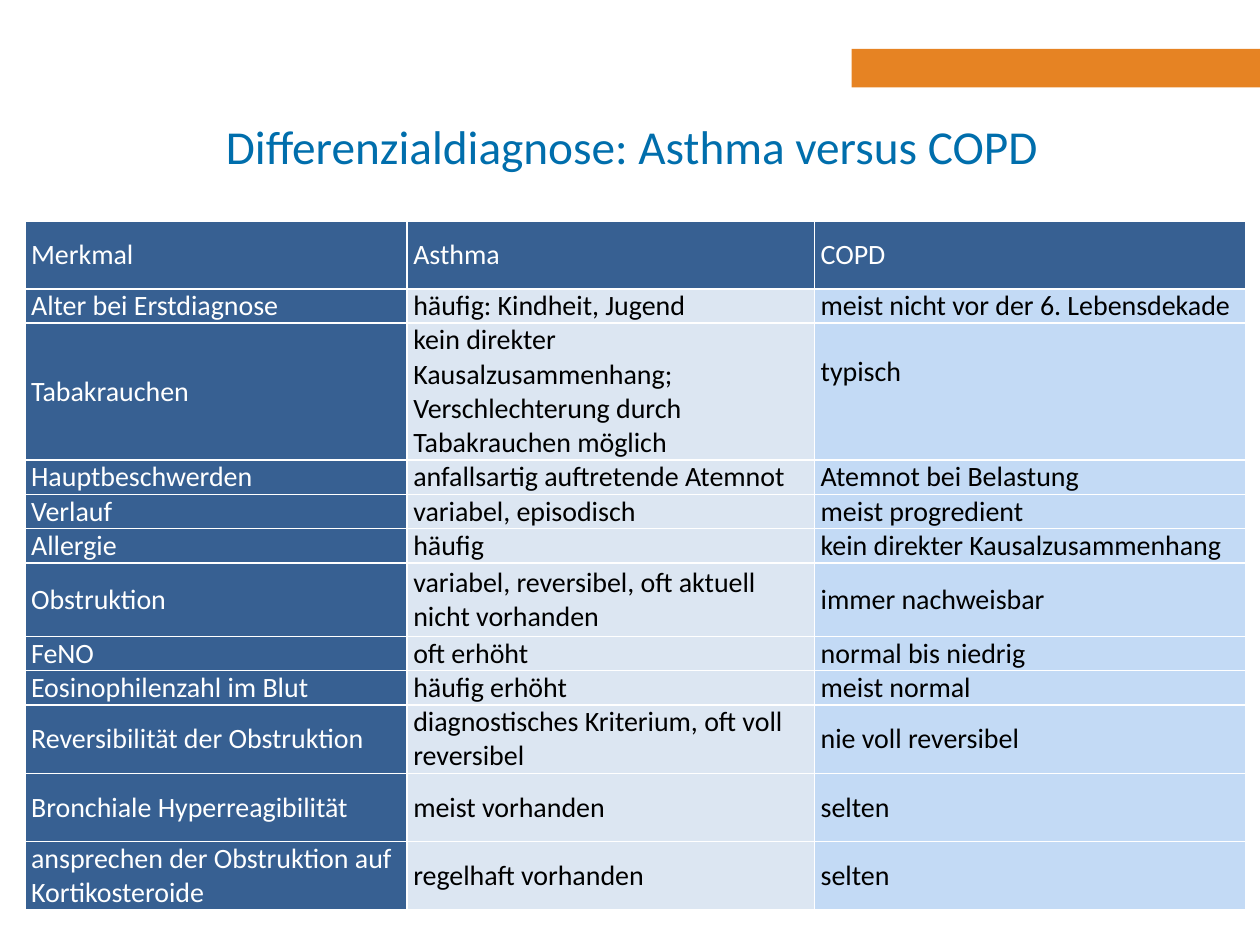
from pptx import Presentation
from pptx.dml.color import RGBColor
from pptx.enum.shapes import MSO_SHAPE
from pptx.enum.text import MSO_ANCHOR, PP_ALIGN
from pptx.oxml import parse_xml
from pptx.oxml.ns import nsdecls
from pptx.util import Pt

COLUMN_WIDTHS = (218.4, 232.8, 246.4)
COLUMN_FILLS = ("376092", "DCE6F2", "C3DAF5")
COLUMN_TEXTS = ("FFFFFF", "000000", "000000")
ROWS = (
    (38.9, "Merkmal", "Asthma", "COPD"),
    (19.5, "Alter bei Erstdiagnose", "häufig: Kindheit, Jugend", "meist nicht vor der 6. Lebensdekade"),
    (76.5, "Tabakrauchen",
     "kein direkter Kausalzusammenhang; Verschlechterung durch Tabakrauchen möglich", "typisch"),
    (19.5, "Hauptbeschwerden", "anfallsartig auftretende Atemnot", "Atemnot bei Belastung"),
    (19.5, "Verlauf", "variabel, episodisch", "meist progredient"),
    (19.5, "Allergie", "häufig", "kein direkter Kausalzusammenhang"),
    (42, "Obstruktion", "variabel, reversibel, oft aktuell nicht vorhanden", "immer nachweisbar"),
    (19.5, "FeNO", "oft erhöht", "normal bis niedrig"),
    (19.5, "Eosinophilenzahl im Blut", "häufig erhöht", "meist normal"),
    (38.9, "Reversibilität der Obstruktion", "diagnostisches Kriterium, oft voll reversibel",
     "nie voll reversibel"),
    (38.9, "Bronchiale Hyperreagibilität", "meist vorhanden", "selten"),
    (38.9, "ansprechen der Obstruktion auf Kortikosteroide", "regelhaft vorhanden", "selten"),
)


def color(value):
    """Turn a hex string into a colour."""
    return RGBColor.from_string(value)


def apply(target, formats):
    """Set each attribute named in a dict of format values."""
    for name, value in formats.items():
        setattr(target, name, value)


def write(frame, text, size, text_color, alignment=PP_ALIGN.LEFT):
    """Put one formatted paragraph into a text frame."""
    paragraph = frame.paragraphs[0]
    paragraph.alignment = alignment
    span = paragraph.add_run()
    span.text = text
    apply(span.font, {"name": "Calibri", "size": Pt(size), "bold": False})
    span.font.color.rgb = color(text_color)


def add_bar(page, left, top, width, height):
    """Draw the orange bar at the right edge."""
    bar = page.shapes.add_shape(MSO_SHAPE.RECTANGLE, Pt(left), Pt(top), Pt(width), Pt(height))
    bar.shadow.inherit = False
    bar.fill.solid()
    bar.fill.fore_color.rgb = color("E68323")
    bar.line.fill.background()


def add_title(page, left, top, width, height):
    """Place and fill the title placeholder."""
    title = page.shapes.title
    apply(title, {"left": Pt(left), "top": Pt(top), "width": Pt(width), "height": Pt(height)})
    apply(title.text_frame, {"word_wrap": True, "vertical_anchor": MSO_ANCHOR.MIDDLE})
    write(title.text_frame, "Differenzialdiagnose: Asthma versus COPD", 27, "006EAC", PP_ALIGN.CENTER)


def add_borders(cell, line_color):
    """Give a cell thin lines on all sides."""
    properties = cell._tc.get_or_add_tcPr()
    for side in "LRTB":
        properties.append(parse_xml(
            f'<a:ln{side} {nsdecls("a")} w="12700"><a:solidFill>'
            f'<a:srgbClr val="{line_color}"/></a:solidFill></a:ln{side}>'))


def add_comparison(page, left, top, width, height):
    """Build the table that compares the two diseases."""
    table = page.shapes.add_table(
        len(ROWS), len(COLUMN_WIDTHS), Pt(left), Pt(top), Pt(width), Pt(height)).table
    for column, column_width in zip(table.columns, COLUMN_WIDTHS):
        column.width = Pt(column_width * width / sum(COLUMN_WIDTHS))
    for row_index, (row_height, *texts) in enumerate(ROWS):
        table.rows[row_index].height = Pt(row_height)
        for column_index, text in enumerate(texts):
            cell = table.cell(row_index, column_index)
            style_index = column_index if row_index else 0
            apply(cell, {"margin_left": Pt(3.6), "margin_right": Pt(3.6), "margin_top": 0,
                         "margin_bottom": Pt(23 if text == "typisch" else 0),
                         "vertical_anchor": MSO_ANCHOR.MIDDLE})
            add_borders(cell, "FFFFFF")
            cell.fill.solid()
            cell.fill.fore_color.rgb = color(COLUMN_FILLS[style_index])
            write(cell.text_frame, text, 16, COLUMN_TEXTS[style_index])


def main():
    """Build and save the deck."""
    deck = Presentation()
    apply(deck, {"slide_width": Pt(720), "slide_height": Pt(540)})
    page = deck.slides.add_slide(deck.slide_layouts[5])
    add_bar(page, 486.7, 28, 233.3, 22)
    add_title(page, 106.5, 49.7, 509, 67)
    add_comparison(page, 14.2, 126.2, 697.6, sum(row[0] for row in ROWS))
    deck.save("out.pptx")


if __name__ == "__main__":
    main()
